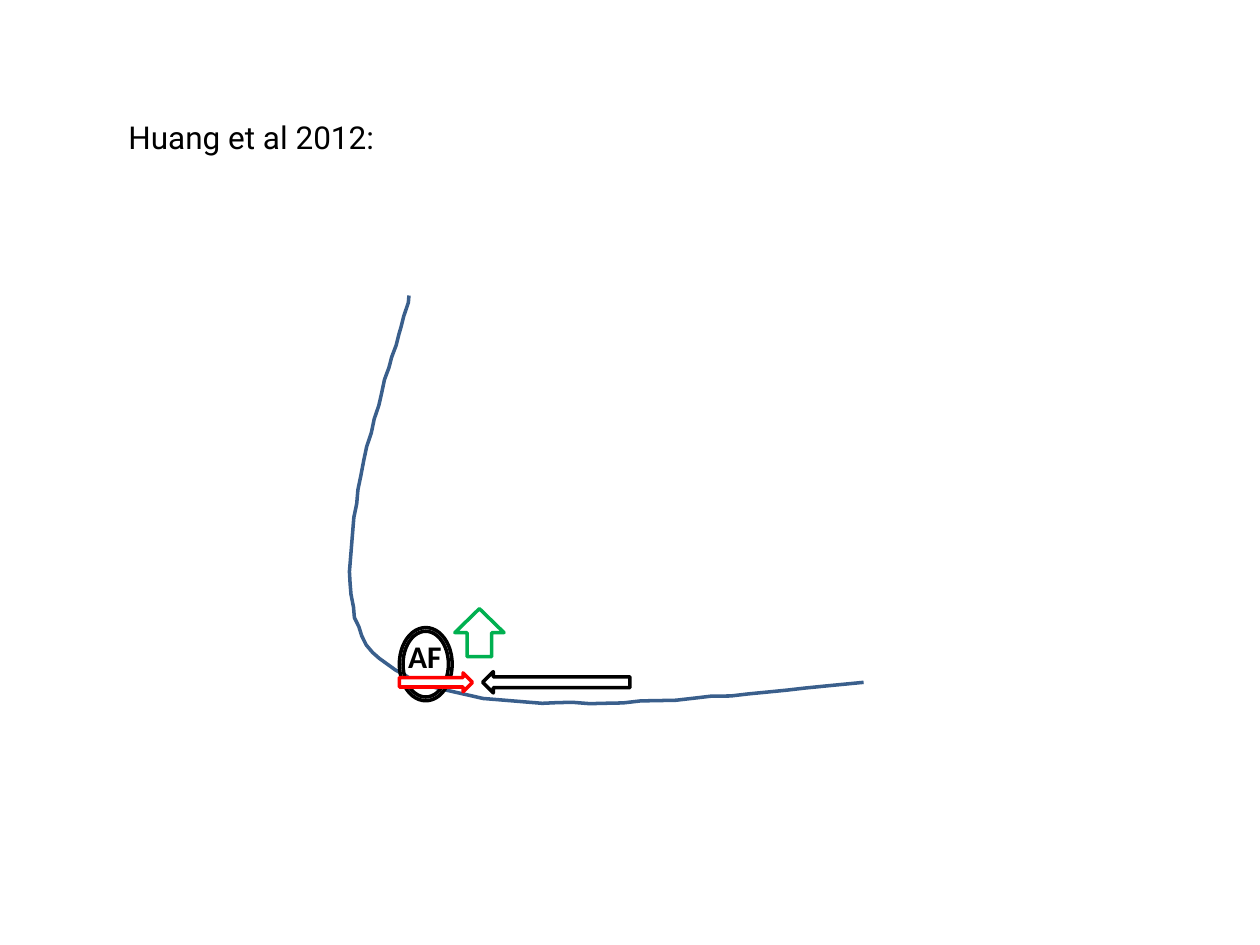
import math
from dataclasses import dataclass

from pptx import Presentation
from pptx.dml.color import RGBColor
from pptx.enum.shapes import MSO_SHAPE
from pptx.enum.text import MSO_ANCHOR, MSO_AUTO_SIZE, PP_ALIGN
from pptx.util import Pt

LEFT_ARROW = MSO_SHAPE.LEFT_ARROW
RIGHT_ARROW = MSO_SHAPE.RIGHT_ARROW
UP_ARROW = MSO_SHAPE.UP_ARROW
DONUT = MSO_SHAPE.DONUT
TITLE_ONLY = 5
LINE_WIDTH = 2
BLACK, WHITE, RED, GREEN, BLUE = "000000", "FFFFFF", "FF0000", "00B050", "3A5F8C"

Point = tuple[float, float]


@dataclass(frozen=True)
class Box:
    left: float
    top: float
    width: float
    height: float

    def lengths(self) -> list[Pt]:
        return [Pt(v) for v in (self.left, self.top, self.width, self.height)]


@dataclass(frozen=True)
class Symbol:
    preset: MSO_SHAPE
    box: Box
    line: str


# Membrane outline as cubic segments: each has two controls and an end point
MEMBRANE_START = (493.2, 390.2)
MEMBRANE_SEGMENTS = [
    ((376.6, 401.8), (259.9, 414), (216.7, 376.6)),
    ((173.5, 339.8), (226.8, 202.3), (234, 169.2)),
]
MEMBRANE_CENTRE = (352.1, 292.3)
MEMBRANE_ROTATION = 4.7
STEPS = 32

LONG_ARROW = Symbol(LEFT_ARROW, Box(275.8, 383.8, 84.2, 12.2), BLACK)
RING = Symbol(DONUT, Box(228.2, 358.6, 30.2, 41.8), BLACK)
FRONT_ARROWS = [
    Symbol(RIGHT_ARROW, Box(228.2, 384.5, 41.8, 10.8), RED),
    Symbol(UP_ARROW, Box(259.9, 347.8, 28.1, 27.4), GREEN),
]


def colour(value: str) -> RGBColor:
    return RGBColor.from_string(value)


def style_line(shape, value: str) -> None:
    shape.shadow.inherit = False
    shape.line.color.rgb = colour(value)
    shape.line.width = Pt(LINE_WIDTH)


def cubic_point(points: list[Point], t: float) -> Point:
    weights = [math.comb(3, i) * t**i * (1 - t) ** (3 - i) for i in range(4)]
    return tuple(sum(w * p[axis] for w, p in zip(weights, points)) for axis in (0, 1))


def turn(point: Point, centre: Point, degrees: float) -> Point:
    angle = math.radians(degrees)
    dx, dy = point[0] - centre[0], point[1] - centre[1]
    return (
        centre[0] + dx * math.cos(angle) - dy * math.sin(angle),
        centre[1] + dx * math.sin(angle) + dy * math.cos(angle),
    )


def draw_membrane(slide) -> None:
    points = [MEMBRANE_START]
    for segment in MEMBRANE_SEGMENTS:
        controls = [points[-1], *segment]
        points += [cubic_point(controls, i / STEPS) for i in range(1, STEPS + 1)]
    first, *rest = [turn(p, MEMBRANE_CENTRE, -MEMBRANE_ROTATION) for p in points]
    builder = slide.shapes.build_freeform(*first, scale=float(Pt(1)))
    builder.add_line_segments(rest, close=False)
    membrane = builder.convert_to_shape()
    membrane.rotation = MEMBRANE_ROTATION
    membrane.fill.background()
    style_line(membrane, BLUE)


def draw_symbol(slide, symbol: Symbol):
    shape = slide.shapes.add_shape(symbol.preset, *symbol.box.lengths())
    shape.fill.solid()
    shape.fill.fore_color.rgb = colour(WHITE)
    style_line(shape, symbol.line)
    return shape


def write_text(shape, text: str, font: str, bold: bool = False) -> None:
    frame = shape.text_frame
    frame.word_wrap = False
    frame.auto_size = MSO_AUTO_SIZE.SHAPE_TO_FIT_TEXT
    frame.vertical_anchor = MSO_ANCHOR.TOP
    para = frame.paragraphs[0]
    para.alignment = PP_ALIGN.LEFT
    span = para.add_run()
    span.text = text
    span.font.name = font
    span.font.size = Pt(18)
    span.font.bold = bold
    span.font.color.rgb = colour(BLACK)


def main() -> None:
    deck = Presentation()
    deck.slide_width, deck.slide_height = Pt(720), Pt(540)
    slide = deck.slides.add_slide(deck.slide_layouts[TITLE_ONLY])

    title = slide.shapes.title
    title.left, title.top, title.width, title.height = Box(66.2, 64.1, 158.4, 28.8).lengths()
    write_text(title, "Huang et al 2012:", "Roboto")

    draw_membrane(slide)
    draw_symbol(slide, LONG_ARROW)
    ring = draw_symbol(slide, RING)
    ring.adjustments[0] = 0.07
    label = slide.shapes.add_textbox(*Box(226.1, 360.7, 33.8, 28.8).lengths())
    write_text(label, "AF", "Calibri", bold=True)
    for arrow in FRONT_ARROWS:
        draw_symbol(slide, arrow)

    deck.save("out.pptx")


if __name__ == "__main__":
    main()
